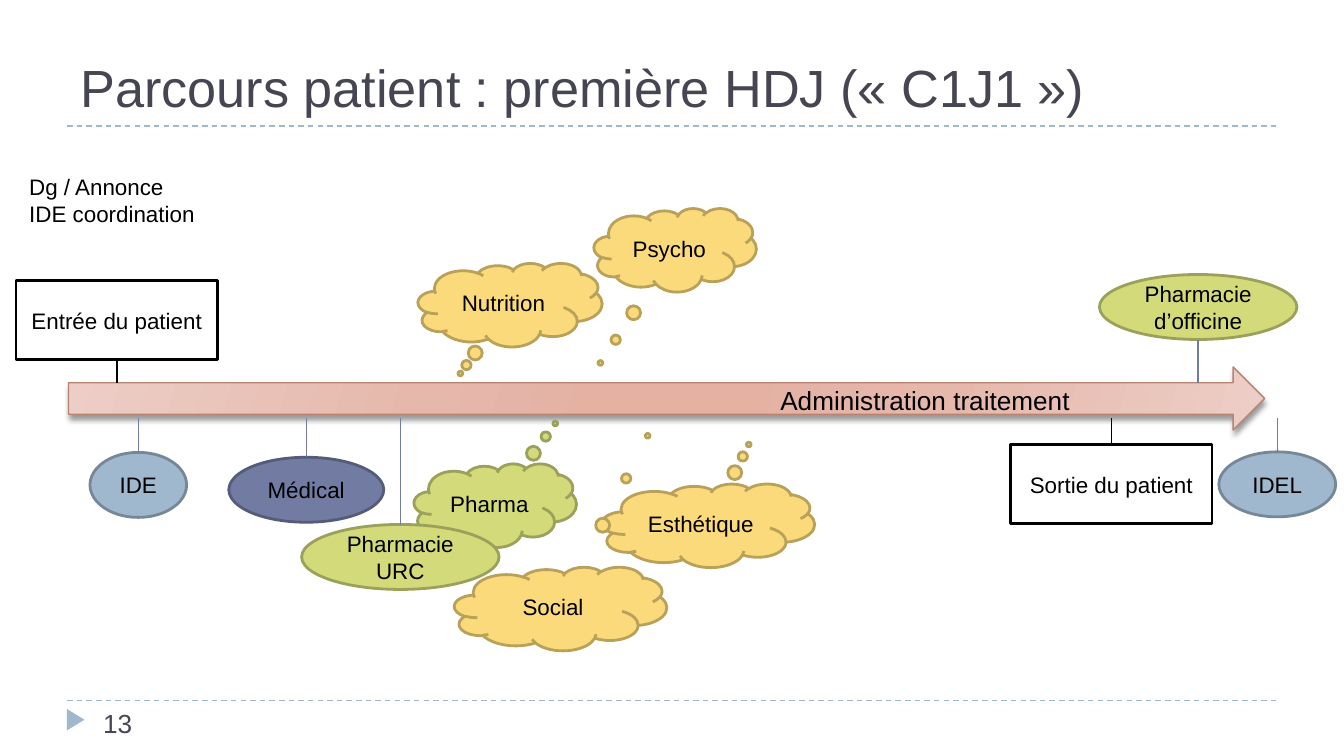
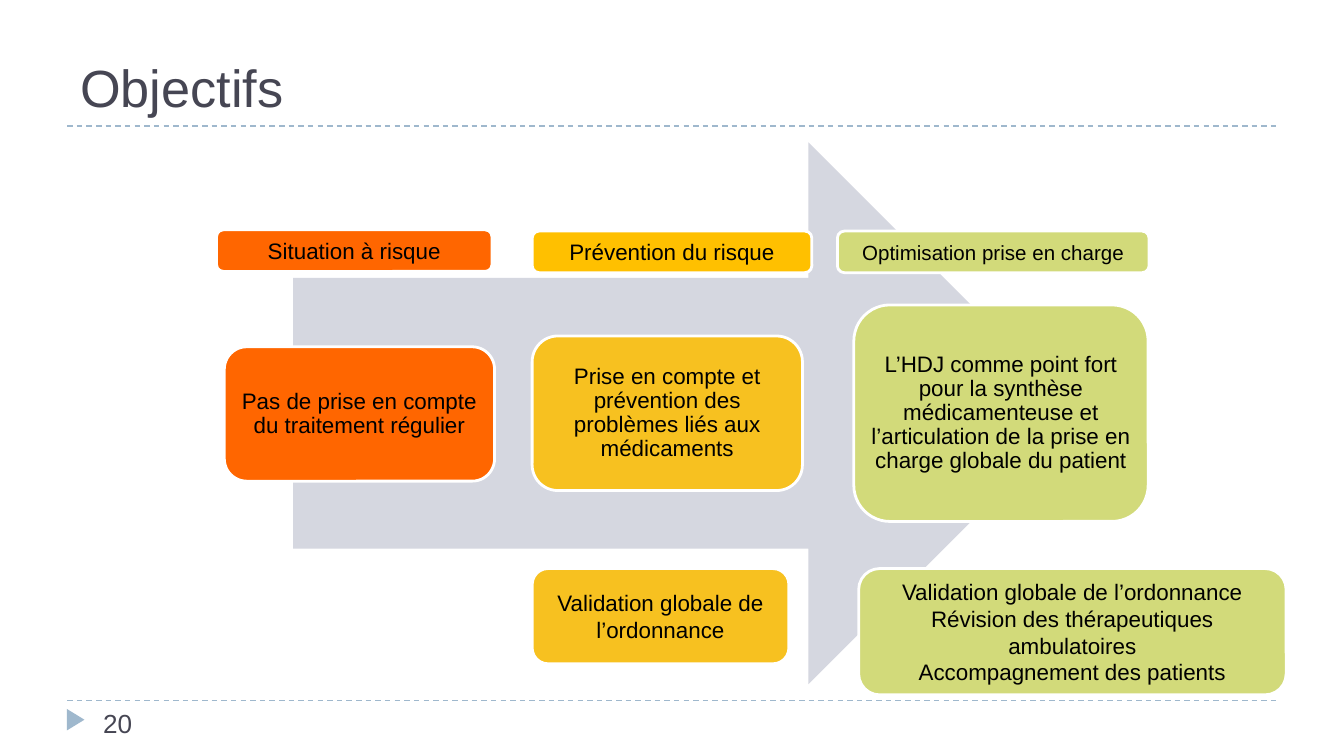
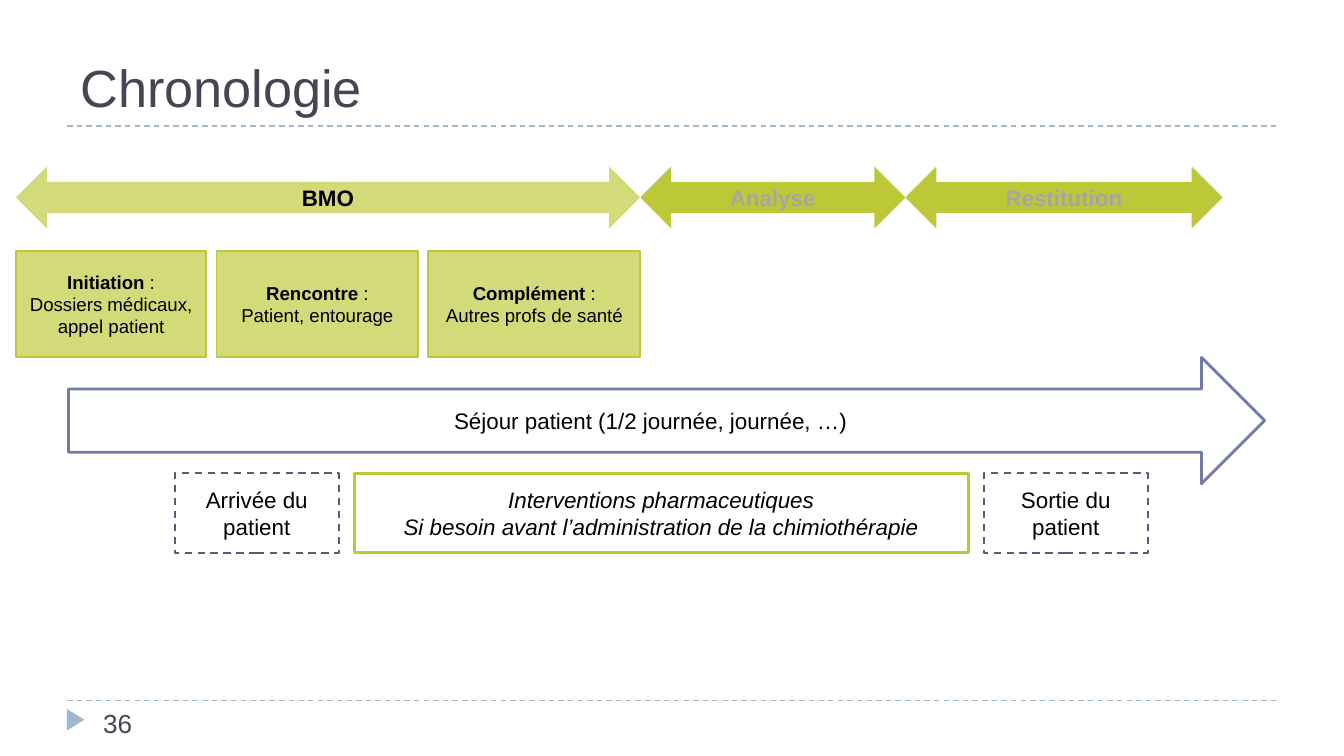
"""Build three slides on the patient's day-hospital pathway, its goals and its timeline."""
from lxml import etree
from pptx import Presentation
from pptx.dml.color import RGBColor
from pptx.enum.dml import MSO_LINE
from pptx.enum.shapes import MSO_CONNECTOR, MSO_SHAPE
from pptx.enum.text import MSO_ANCHOR, PP_ALIGN
from pptx.oxml.ns import qn
from pptx.util import Pt

RECT, ROUNDED, ELLIPSE = MSO_SHAPE.RECTANGLE, MSO_SHAPE.ROUNDED_RECTANGLE, MSO_SHAPE.OVAL
CLOUD, TRIANGLE = MSO_SHAPE.CLOUD_CALLOUT, MSO_SHAPE.ISOSCELES_TRIANGLE
ARROW, DOUBLE_ARROW = MSO_SHAPE.RIGHT_ARROW, MSO_SHAPE.LEFT_RIGHT_ARROW
STRAIGHT, DASH = MSO_CONNECTOR.STRAIGHT, MSO_LINE.DASH
TOP, MIDDLE, BOTTOM = MSO_ANCHOR.TOP, MSO_ANCHOR.MIDDLE, MSO_ANCHOR.BOTTOM
LEFT, CENTER = PP_ALIGN.LEFT, PP_ALIGN.CENTER

FONT = "Arial"
COLORS = {
    "black": "000000", "white": "FFFFFF", "title": "464653", "grey": "A6A6A6",
    "sky": "9FB8CD", "sky_edge": "768898", "indigo": "727CA3", "indigo_edge": "545C79",
    "lime": "D2DA7A", "lime_edge": "9BA15A", "olive": "BCC838",
    "yellow": "FADA7A", "yellow_edge": "B9A15A", "rose_edge": "B88472",
    "orange": "FF6600", "amber": "FFC000", "gold": "F7C120", "mist": "D5D7E0",
}

AXIS = (36.7, 196.6, 640.8, 33.8)
AXIS_TOP, AXIS_BOTTOM = 205, 224
AXIS_STOPS = [(0, "ECCEC6"), (30, "E6B8AC"), (45, "E4B1A3"),
              (55, "E4B1A3"), (73, "E6B8AC"), (100, "ECCEC6")]
CLOUDS = [
    ("Nutrition", 224, 141, 98.6, "yellow", (-0.27, 0.82)),
    ("Psycho", 318.2, 111.6, 87, "yellow", (-0.46, 1.35)),
    ("Esthétique", 322.6, 259.2, 113.8, "yellow", (0.19, -0.97)),
    ("Social", 243.4, 303.8, 113.8, "yellow", (0.41, -2.07)),
    ("Pharma", 221.8, 248.4, 87, "lime", (0.37, -0.98)),
]
MILESTONES = [
    (["Entrée du patient"], RECT, (8.6, 150.4, 108, 42.4), "white", "black", "black"),
    (["Sortie du patient"], RECT, (541.4, 238.2, 108, 42.4), "white", "black", "black"),
    (["IDE"], ELLIPSE, (48.2, 242.4, 51.8, 34.8), "sky", "sky_edge", "indigo"),
    (["Médical"], ELLIPSE, (122.6, 245, 83, 34.8), "indigo", "indigo_edge", "indigo"),
    (["Pharmacie d’officine"], ELLIPSE, (589, 147.1, 105.8, 34.8), "lime", "lime_edge", "indigo"),
    (["Pharmacie", "URC"], ELLIPSE, (161.6, 281, 105.8, 34.8), "lime", "lime_edge", "indigo"),
    (["IDEL"], ELLIPSE, (653, 242.1, 62.6, 34.8), "sky", "sky_edge", "indigo"),
]

GOALS_ARROW = (157, 76.3, 421.2, 290.2)
GOALS = [
    ("Pas de prise en compte du traitement régulier", (120.2, 185.8, 144.8, 72), "orange"),
    ("Prise en compte et prévention des problèmes liés aux médicaments",
     (285.1, 180, 144.8, 82.8), "gold"),
    ("L’HDJ comme point fort pour la synthèse médicamenteuse et l’articulation "
     "de la prise en charge globale du patient", (457.4, 163.4, 157.7, 116), "lime"),
]
GOAL_LABELS = [
    (["Situation à risque"], (116, 123.1, 147.6, 22.3), "orange", 12),
    (["Prévention du risque"], (285.1, 123.8, 149.8, 22.3), "amber", 12),
    (["Optimisation prise en charge"], (448.6, 123.8, 167, 22.3), "lime", 11),
    (["Validation globale de l’ordonnance"], (285.1, 304.6, 137.5, 51), "gold", 12),
    (["Validation globale de l’ordonnance", "Révision des thérapeutiques ambulatoires",
      "Accompagnement des patients"], (460, 304.6, 229, 67.7), "lime", 12),
]

PHASES = [("BMO", 334.5, "lime", "black"), ("Analyse", 142, "olive", "grey"),
          ("Restitution", 170, "olive", "grey")]
STEPS = [("Initiation", "Dossiers médicaux, appel patient", 102),
         ("Rencontre", "Patient, entourage", 108),
         ("Complément", "Autres profs de santé", 113.5)]
STAY = ("Séjour patient (1/2 journée, journée, …)", (36.7, 191.5, 640.8, 67.7))
STAY_EVENTS = [
    (["Arrivée du patient"], 88, dict(line="indigo_edge", line_width=1, dash=DASH), False),
    (["Interventions pharmaceutiques", "Si besoin avant l’administration de la chimiothérapie"],
     329, dict(line="olive"), True),
    (["Sortie du patient"], 88, dict(line="indigo_edge", line_width=1, dash=DASH), False),
]


def rgb(name):
    """Return the named colour."""
    return RGBColor.from_string(COLORS[name])


def write(part, paragraphs, size=12, color="black", bold=False, italic=False,
          align=CENTER, anchor=MIDDLE, spacing=None, inset=None):
    """Fill a part with paragraphs, each a string or a list of (text, bold) runs."""
    frame = part.text_frame
    frame.word_wrap = True
    frame.vertical_anchor = anchor
    if inset is not None:
        frame.margin_left = frame.margin_right = Pt(inset)
        frame.margin_top = frame.margin_bottom = Pt(inset)
    for index, content in enumerate(paragraphs):
        paragraph = frame.add_paragraph() if index else frame.paragraphs[0]
        paragraph.alignment = align
        if spacing:
            paragraph.line_spacing = spacing
        for text, heavy in [(content, bold)] if isinstance(content, str) else content:
            run = paragraph.add_run()
            run.text = text
            font = run.font
            font.name, font.size, font.bold, font.italic = FONT, Pt(size), heavy, italic
            font.color.rgb = rgb(color)


def add_text(slide, place, paragraphs, **style):
    """Add a text box."""
    write(slide.shapes.add_textbox(*map(Pt, place)), paragraphs, **style)


def add_part(slide, kind, place, fill=None, line=None, line_width=1.5, dash=None):
    """Add a preset shape without shadow."""
    part = slide.shapes.add_shape(kind, *map(Pt, place))
    part.shadow.inherit = False
    if fill:
        part.fill.solid()
        part.fill.fore_color.rgb = rgb(fill)
    else:
        part.fill.background()
    if line:
        part.line.color.rgb = rgb(line)
        part.line.width = Pt(line_width)
        part.line.dash_style = dash
    else:
        part.line.fill.background()
    return part


def add_line(slide, start, end, color, dash=None):
    """Add a thin straight connector without shadow."""
    line = slide.shapes.add_connector(STRAIGHT, *map(Pt, start + end))
    line.line.color.rgb = rgb(color)
    line.line.width = Pt(0.75)
    line.line.dash_style = dash
    etree.SubElement(line._element.spPr, qn("a:effectLst"))
    return line


def lefts(start, widths, gap=0):
    """Return the left edge of each part in a row."""
    return [start + sum(widths[:index]) + gap * index for index in range(len(widths))]


def add_slide(deck, title, number):
    """Add a slide with its title, rules and page number."""
    slide = deck.slides.add_slide(deck.slide_layouts[6])
    for y in (375.2, 67.6):
        add_line(slide, (36, y), (684, y), "sky", DASH)
    add_part(slide, TRIANGLE, (34.8, 380.9, 11.5, 9.4), "sky").rotation = 90
    add_text(slide, (36, 8.6, 648, 58.4), [title], size=28, color="title",
             align=LEFT, anchor=BOTTOM)
    add_text(slide, (48.2, 375.2, 156.2, 21.6), [str(number)], size=14, color="title",
             align=LEFT, anchor=TOP)
    return slide


def shade_axis(axis):
    """Give the time axis its gradient and soft shadow."""
    axis.fill.gradient()
    axis.fill.gradient_angle = 344
    stops = axis._element.spPr.find(".//" + qn("a:gsLst"))
    for stop in list(stops):
        stops.remove(stop)
    for position, color in AXIS_STOPS:
        stop = etree.SubElement(stops, qn("a:gs"), pos=str(position * 1000))
        etree.SubElement(stop, qn("a:srgbClr"), val=color)
    shadow = etree.SubElement(axis._element.spPr.find(qn("a:effectLst")), qn("a:outerShdw"),
                              blurRad=str(Pt(3)), dist=str(Pt(2)), dir="5400000", rotWithShape="0")
    black = etree.SubElement(shadow, qn("a:srgbClr"), val=COLORS["black"])
    etree.SubElement(black, qn("a:alpha"), val="40000")


def add_milestone(slide, paragraphs, kind, place, fill, edge, stem_color):
    """Add a milestone and the stem that ties it to the time axis."""
    milestone = add_part(slide, kind, place, fill, edge)
    write(milestone, paragraphs)
    left, top, width, height = place
    x, above = left + width / 2, top < AXIS_TOP
    start, end = (top + height, AXIS_TOP) if above else (top, AXIS_BOTTOM)
    stem = add_line(slide, (x, start), (x, end), stem_color)
    if kind == RECT or not above:
        stem.begin_connect(milestone, 2 if above else 0)


def build_pathway(deck):
    """Build the first-visit pathway."""
    slide = add_slide(deck, "Parcours patient : première HDJ («\u00a0C1J1\u00a0»)".replace("\u00a0", " "), 13)
    shade_axis(add_part(slide, ARROW, AXIS, "white", "rose_edge", 0.75))
    add_text(slide, (8.6, 89.3, 108, 36), ["Dg / Annonce", "IDE coordination"],
             align=LEFT, anchor=TOP)
    for name, left, top, width, color, tail in CLOUDS:
        cloud = add_part(slide, CLOUD, (left, top, width, 44.8), color, color + "_edge")
        cloud.adjustments[0], cloud.adjustments[1] = tail
        write(cloud, [name])
    for milestone in MILESTONES:
        add_milestone(slide, *milestone)
    add_text(slide, (388, 202.3, 215.3, 22.3), ["Administration traitement"], size=14, anchor=TOP)


def build_goals(deck):
    """Build the goals."""
    slide = add_slide(deck, "Objectifs", 20)
    add_part(slide, ARROW, GOALS_ARROW, "mist")
    for text, place, color in GOALS:
        write(add_part(slide, ROUNDED, place, color, "white"), [text], spacing=0.9, inset=3.6)
    for paragraphs, place, color, size in GOAL_LABELS:
        write(add_part(slide, ROUNDED, place, color, "white"), paragraphs, size=size)


def build_timeline(deck):
    """Build the timeline."""
    slide = add_slide(deck, "Chronologie", 36)
    stay, place = STAY
    write(add_part(slide, ARROW, place, "white", "indigo"), [stay])
    for left, (name, width, fill, color) in zip(lefts(8.5, [p[1] for p in PHASES]), PHASES):
        write(add_part(slide, DOUBLE_ARROW, (left, 89.2, width, 33.2), fill),
              [name], color=color, bold=True)
    for left, (name, detail, width) in zip(lefts(8.5, [s[2] for s in STEPS], 5.5), STEPS):
        write(add_part(slide, RECT, (left, 134.5, width, 56.8), "lime", "olive", 1),
              [[(name, True), (" :", False)], detail], size=10)
    event_lefts = lefts(93.6, [event[1] for event in STAY_EVENTS], 8.2)
    for left, (paragraphs, width, outline, italic) in zip(event_lefts, STAY_EVENTS):
        write(add_part(slide, RECT, (left, 253.6, width, 42.5), **outline),
              paragraphs, italic=italic)


def main():
    """Build and save the deck."""
    deck = Presentation()
    deck.slide_width, deck.slide_height = Pt(720), Pt(405)
    build_pathway(deck)
    build_goals(deck)
    build_timeline(deck)
    deck.save("out.pptx")


if __name__ == "__main__":
    main()
